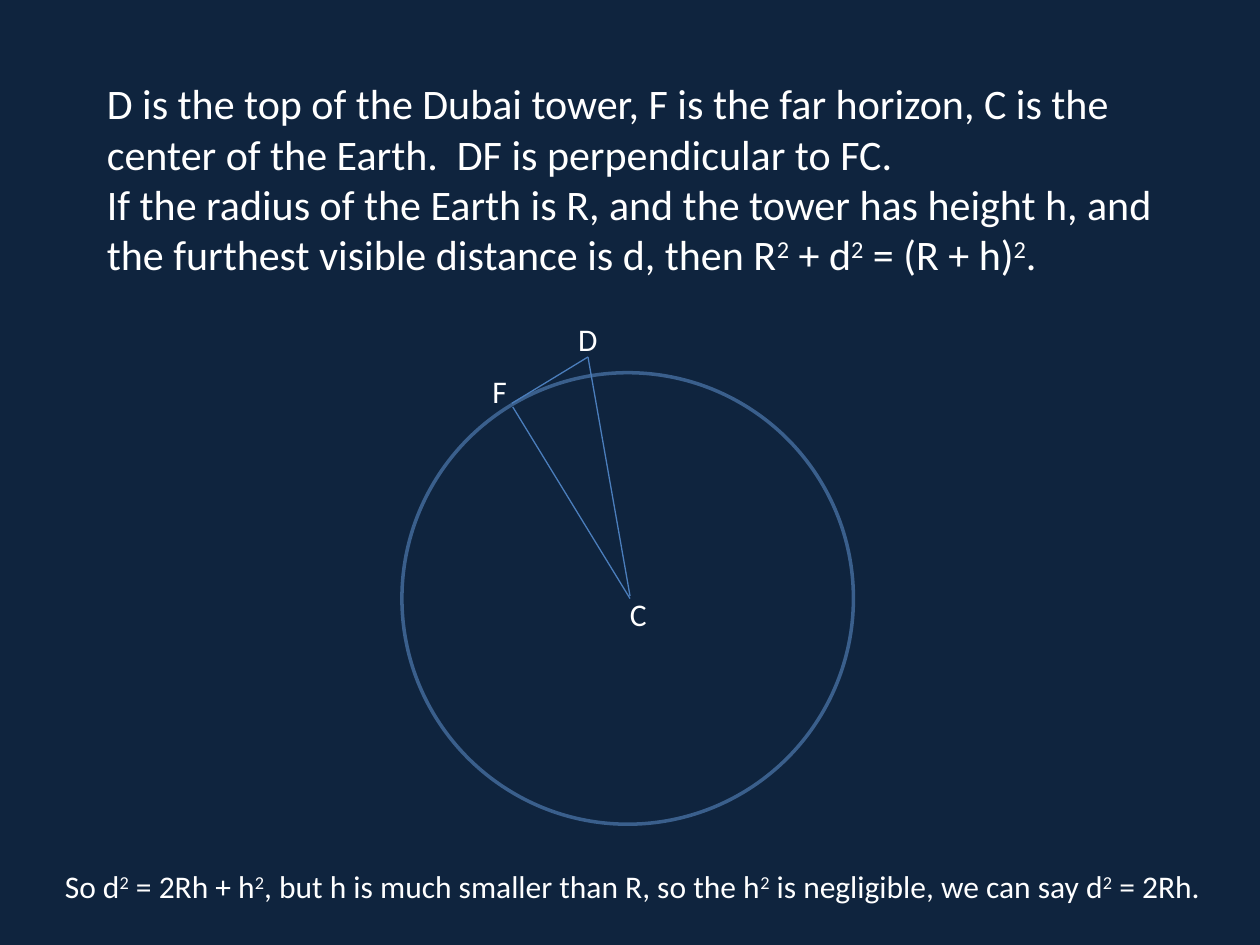
import pptx
import pptx.dml.color
import pptx.enum.shapes
import pptx.enum.text
import pptx.oxml.ns
import pptx.util
from lxml import etree

Pt = pptx.util.Pt
NAVY = pptx.dml.color.RGBColor(0x0F, 0x24, 0x3E)
WHITE = pptx.dml.color.RGBColor(0xFF, 0xFF, 0xFF)
CIRCLE_BLUE = pptx.dml.color.RGBColor(0x3A, 0x5F, 0x8C)
LINE_BLUE = pptx.dml.color.RGBColor(0x4B, 0x7E, 0xBC)

PREMISE = (
    "D is the top of the Dubai tower, F is the far horizon, C is the center of the Earth.  "
    "DF is perpendicular to FC. \n"
    "If the radius of the Earth is R, and the tower has height h, and the furthest visible "
    "distance is d, then R² + d² = (R + h)²."
)
CONCLUSION = (
    "So d² = 2Rh + h², but h is much smaller than R, "
    "so the h² is negligible, we can say d² = 2Rh."
)
POINT_LABELS = [
    ("D", 323.3, 179.3, 41.8),
    ("F", 274.3, 208.8, 30.2),
    ("C", 352.8, 336.2, 30.2),
]
TRIANGLE_SIDES = [
    (292.5, 230.5, 336, 204),
    (336, 204, 360, 340.5),
    (293, 232.5, 360, 342),
]


def add_runs(paragraph, line):
    for index, plain in enumerate(line.split("²")):
        if index:
            exponent = paragraph.add_run()
            exponent.text = "2"
            exponent.font._element.set("baseline", "30000")
        paragraph.add_run().text = plain


def add_text(slide, text, left, top, width, height, size,
             anchor=pptx.enum.text.MSO_ANCHOR.TOP):
    box = slide.shapes.add_textbox(Pt(left), Pt(top), Pt(width), Pt(height))
    frame = box.text_frame
    frame.word_wrap = True
    frame.vertical_anchor = anchor
    paragraph = frame.paragraphs[0]
    paragraph.font.name = "Calibri"
    paragraph.font.size = Pt(size)
    paragraph.font.color.rgb = WHITE
    for index, line in enumerate(text.split("\n")):
        if index:
            paragraph.add_line_break()
        add_runs(paragraph, line)


def add_circle(slide, left, top, diameter):
    circle = slide.shapes.add_shape(
        pptx.enum.shapes.MSO_SHAPE.OVAL,
        Pt(left), Pt(top), Pt(diameter), Pt(diameter))
    circle.shadow.inherit = False
    circle.fill.background()
    circle.line.color.rgb = CIRCLE_BLUE
    circle.line.width = Pt(2)


def add_side(slide, *ends):
    side = slide.shapes.add_connector(
        pptx.enum.shapes.MSO_CONNECTOR.STRAIGHT, *map(Pt, ends))
    side.line.color.rgb = LINE_BLUE
    side.line.width = Pt(0.75)
    etree.SubElement(side._element.spPr, pptx.oxml.ns.qn("a:effectLst"))


def main():
    presentation = pptx.Presentation()
    presentation.slide_width = Pt(720)
    presentation.slide_height = Pt(540)
    slide = presentation.slides.add_slide(presentation.slide_layouts[6])
    slide.background.fill.solid()
    slide.background.fill.fore_color.rgb = NAVY

    add_text(slide, PREMISE, 54, 24, 612, 156, 24, pptx.enum.text.MSO_ANCHOR.MIDDLE)
    add_circle(slide, 229.7, 213, 258)
    for ends in TRIANGLE_SIDES:
        add_side(slide, *ends)
    for letter, left, top, width in POINT_LABELS:
        add_text(slide, letter, left, top, width, 29, 18)
    add_text(slide, CONCLUSION, 30, 492, 690, 29, 18)
    presentation.save("out.pptx")


if __name__ == "__main__":
    main()
